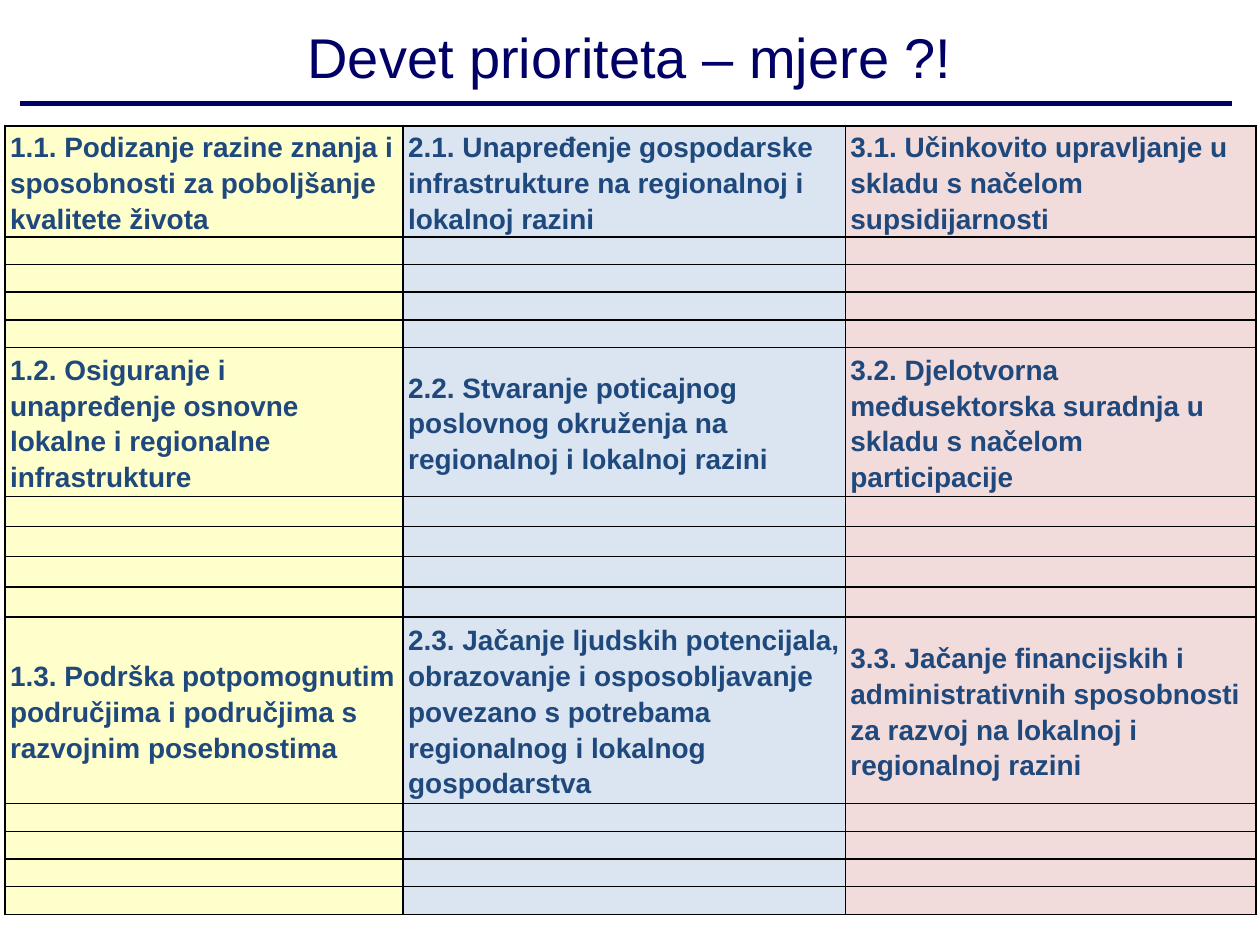
import pptx
import pptx.util
from dataclasses import dataclass
from lxml import etree
from pptx.dml.color import RGBColor
from pptx.enum.shapes import MSO_CONNECTOR
from pptx.enum.text import MSO_ANCHOR, PP_ALIGN
from pptx.oxml.ns import qn
from pptx.util import Inches, Pt


@dataclass(frozen=True)
class Theme:
    font: str = "Arial"
    navy: str = "000066"
    text: str = "1F497D"
    border: str = "000000"
    columns: tuple = ("FFFFCC", "DBE5F1", "F2DBDB")
    title_size: int = 32
    body_size: int = 16
    empty_size: int = 8


THEME = Theme()
TITLE = "Devet prioriteta – mjere ?!"
PRIORITIES = [
    ("1.1. Podizanje razine znanja i sposobnosti za poboljšanje kvalitete života",
     "2.1. Unapređenje gospodarske infrastrukture na regionalnoj i lokalnoj razini",
     "3.1. Učinkovito upravljanje u skladu s načelom supsidijarnosti"),
    ("1.2. Osiguranje i unapređenje osnovne lokalne i regionalne infrastrukture",
     "2.2. Stvaranje poticajnog poslovnog okruženja na regionalnoj i lokalnoj razini",
     "3.2. Djelotvorna međusektorska suradnja u skladu s načelom participacije"),
    ("1.3. Podrška potpomognutim područjima i područjima s razvojnim posebnostima",
     "2.3. Jačanje ljudskih potencijala, obrazovanje i osposobljavanje povezano s "
     "potrebama regionalnog i lokalnog gospodarstva",
     "3.3. Jačanje financijskih i administrativnih sposobnosti za razvoj na lokalnoj "
     "i regionalnoj razini"),
]
COLUMN_WIDTHS = (3.16, 3.51, 3.26)
GROUP_HEIGHTS = ((0.88, 0.22), (1.18, 0.24), (1.48, 0.22))  # priority row, measure row
MEASURES = 4


def add_title(slide):
    title = slide.shapes.title
    title.left, title.top, title.width, title.height = map(Inches, (0.12, 0.13, 9.76, 0.63))
    title.text_frame.text = TITLE
    title.text_frame.vertical_anchor = MSO_ANCHOR.MIDDLE
    paragraph = title.text_frame.paragraphs[0]
    paragraph.alignment = PP_ALIGN.CENTER
    paragraph.font.name = THEME.font
    paragraph.font.size = Pt(THEME.title_size)
    paragraph.font.color.rgb = RGBColor.from_string(THEME.navy)


def add_rule(slide):
    rule = slide.shapes.add_connector(
        MSO_CONNECTOR.STRAIGHT, *map(Inches, (0.16, 0.82, 9.78, 0.82)))
    rule.line.color.rgb = RGBColor.from_string(THEME.navy)
    rule.line.width = Pt(3)
    etree.SubElement(rule.element.spPr, qn("a:effectLst"))


def add_borders(cell):
    properties = cell._tc.get_or_add_tcPr()
    for side in ("a:lnL", "a:lnR", "a:lnT", "a:lnB"):
        line = etree.SubElement(properties, qn(side), w=str(Pt(1)))
        fill = etree.SubElement(line, qn("a:solidFill"))
        etree.SubElement(fill, qn("a:srgbClr"), val=THEME.border)


def format_cell(cell, text, color):
    add_borders(cell)
    cell.fill.solid()
    cell.fill.fore_color.rgb = RGBColor.from_string(color)
    cell.vertical_anchor = MSO_ANCHOR.MIDDLE
    cell.margin_left = cell.margin_right = Inches(0.04)
    cell.margin_top = cell.margin_bottom = 0
    paragraph = cell.text_frame.paragraphs[0]
    if not text:
        # The end mark's size keeps an empty row from growing.
        etree.SubElement(paragraph._p, qn("a:endParaRPr"), sz=str(THEME.empty_size * 100))
        return
    cell.text = text
    paragraph = cell.text_frame.paragraphs[0]
    paragraph.line_spacing = 1.15
    paragraph.space_after = Pt(2)
    paragraph.font.name = THEME.font
    paragraph.font.size = Pt(THEME.body_size)
    paragraph.font.bold = True
    paragraph.font.color.rgb = RGBColor.from_string(THEME.text)


def add_priorities(slide):
    rows = []
    for texts, (priority_height, measure_height) in zip(PRIORITIES, GROUP_HEIGHTS):
        rows.append((texts, priority_height))
        rows += [(("",) * len(texts), measure_height)] * MEASURES
    table = slide.shapes.add_table(
        len(rows), len(COLUMN_WIDTHS), Inches(0.04), Inches(1),
        Inches(sum(COLUMN_WIDTHS)), Inches(sum(height for _, height in rows))).table
    table.first_row = table.horz_banding = False
    for column, width in zip(table.columns, COLUMN_WIDTHS):
        column.width = Inches(width)
    for row, (texts, height) in zip(table.rows, rows):
        row.height = Inches(height)
        for cell, text, color in zip(row.cells, texts, THEME.columns):
            format_cell(cell, text, color)


def main():
    presentation = pptx.Presentation()
    presentation.slide_width, presentation.slide_height = Inches(10), Inches(7.5)
    slide = presentation.slides.add_slide(presentation.slide_layouts[5])
    add_title(slide)
    add_rule(slide)
    add_priorities(slide)
    presentation.save("out.pptx")


if __name__ == "__main__":
    main()
